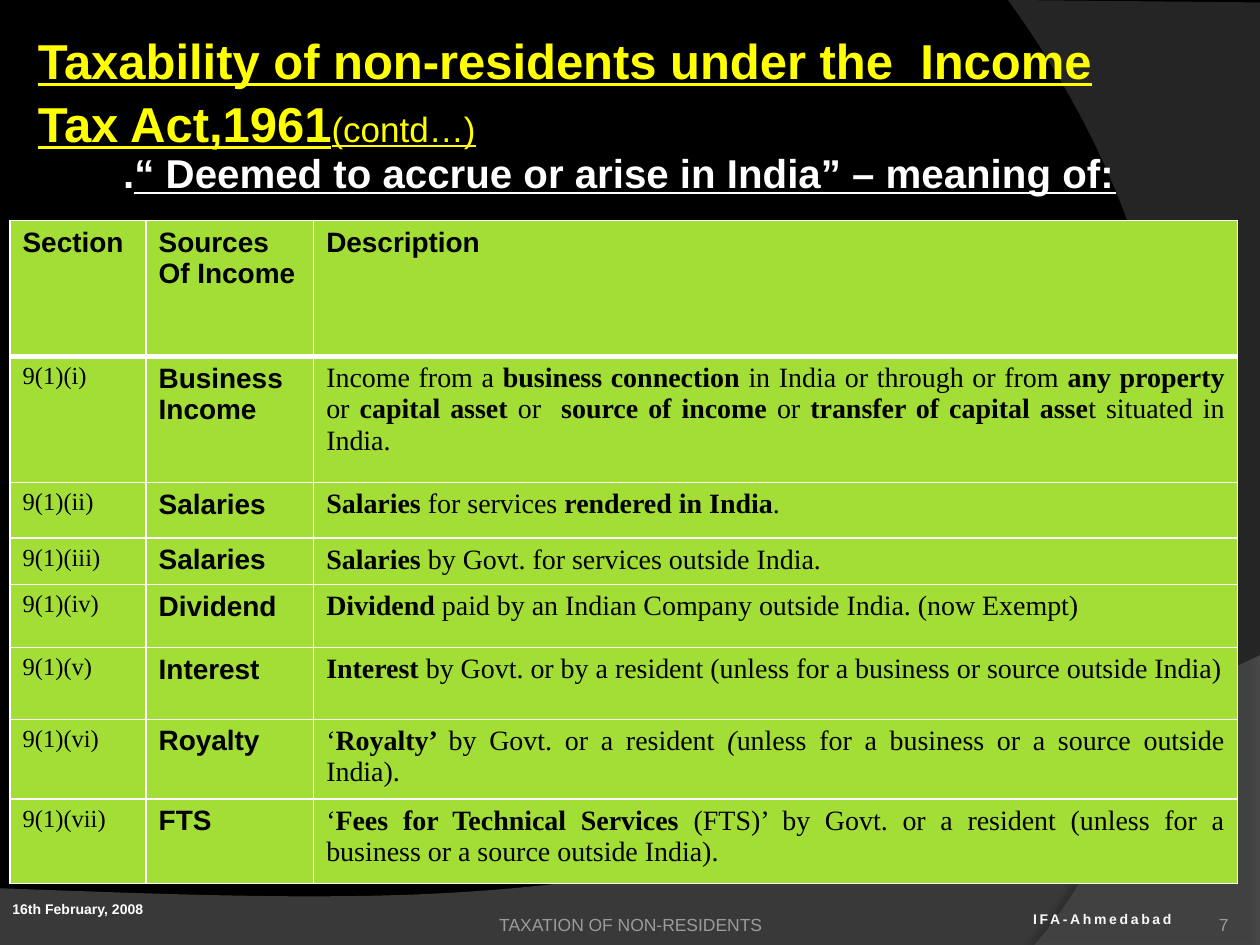
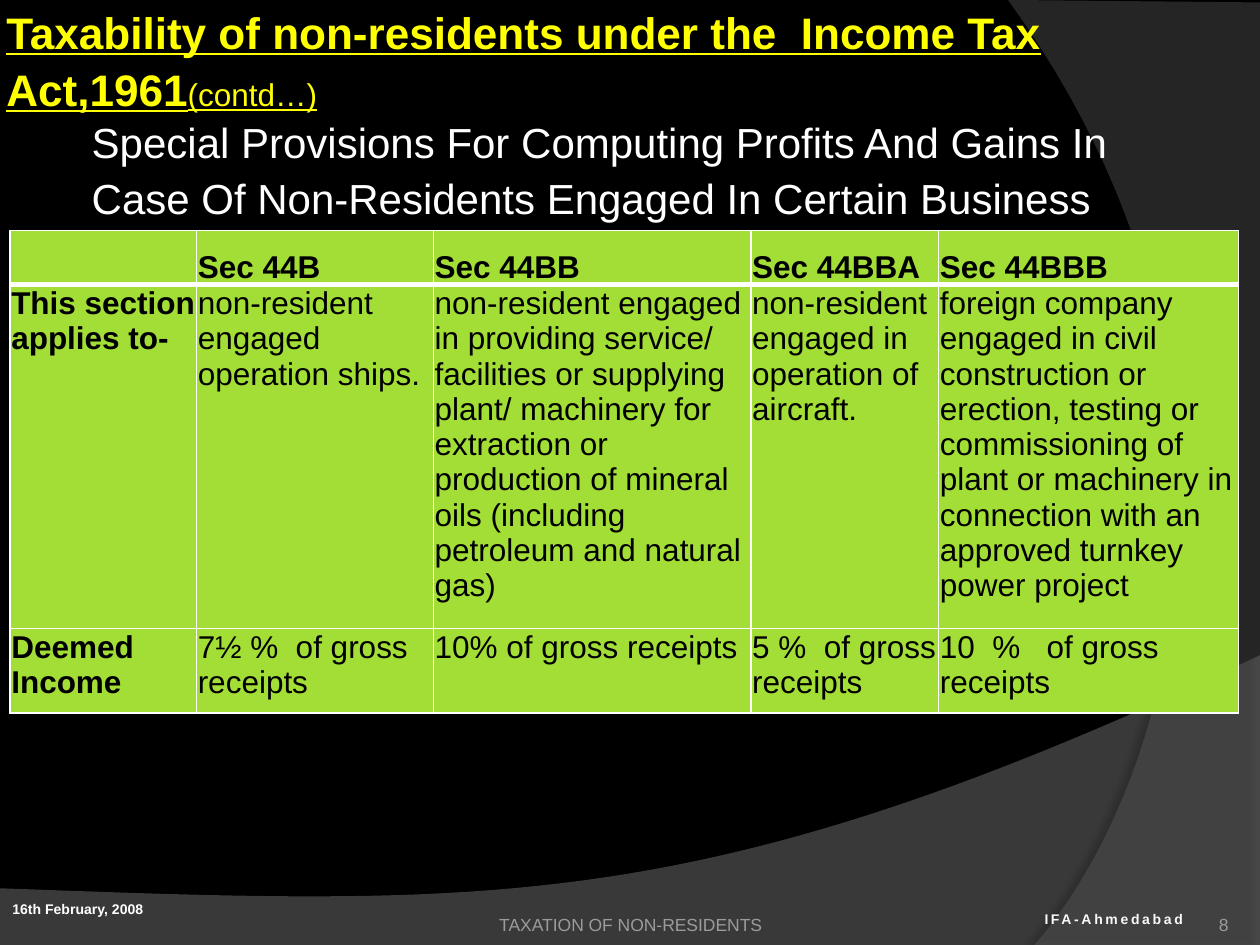
from lxml.etree import SubElement
from pptx import Presentation
from pptx.dml.color import RGBColor
from pptx.enum.text import MSO_ANCHOR as Anchor, PP_ALIGN as Align
from pptx.oxml.ns import qn
from pptx.util import Inches, Pt

COLORS = {
    "background": "000000",
    "swoosh": "7F7F7F",
    "arc": "5E5E5E",
    "title": "FFFF00",
    "white": "FFFFFF",
    "footer": "9D9B9A",
    "venue": "F8F8F8",
    "cell": "A2DE36",
    "ink": "000000",
}
SANS = "Arial"
SERIF = "Times New Roman"
DEFAULT_INSETS = (0.1, 0.05, 0.1, 0.05)
TIGHT_INSETS = (0.01, 0.01, 0.01, 0)
TEXT_SPACING = 1.08

INCOME_ROWS = [
    ("Section", "Sources Of Income", "Description"),
    ("9(1)(i)", "Business Income",
     "Income from a *business connection *in India or through or from *any property *or "
     "*capital asset* or  *source of income *or *transfer of capital asse*t situated in India."),
    ("9(1)(ii)", "Salaries", "*Salaries *for services *rendered in India*."),
    ("9(1)(iii)", "Salaries", "*Salaries* by Govt. for services outside India."),
    ("9(1)(iv)", "Dividend",
     "*Dividend* paid by an Indian Company outside India. (now Exempt)"),
    ("9(1)(v)", "Interest",
     "*Interest* by Govt. or by a resident (unless for a business or source outside India)"),
    ("9(1)(vi)", "Royalty",
     "‘*Royalty’ *by Govt. or a resident _(_unless for a business or a source outside India)."),
    ("9(1)(vii)", "FTS",
     "‘*Fees for Technical Services *(FTS)’ by Govt. or a resident "
     "(unless for a business or a source outside India)."),
]
PROVISION_ROWS = [
    ("", "Sec 44B", "Sec 44BB", "Sec 44BBA", "Sec 44BBB"),
    ("This section applies to-",
     "non-resident engaged operation ships.",
     "non-resident engaged\nin providing service/ facilities or supplying plant/ machinery for "
     "extraction or production of mineral oils (including petroleum and natural gas)",
     "non-resident engaged in operation of aircraft.",
     "foreign company engaged in civil construction or erection, testing or commissioning of "
     "plant or machinery in connection with an approved turnkey power project"),
    ("Deemed Income", "7½ %  of gross receipts", "10% of gross receipts",
     "5 %  of gross receipts", "10  %   of gross receipts"),
]


def rgb(name):
    return RGBColor.from_string(COLORS[name])


def style_run(run, size, color, bold=False, underline=False, font=SANS, italic=False):
    run.font.size = Pt(size)
    run.font.name = font
    run.font.bold = bold
    run.font.italic = italic
    run.font.underline = underline
    run.font.color.rgb = rgb(color)


def add_text(slide, box, runs, align=Align.LEFT, anchor=Anchor.TOP,
             insets=DEFAULT_INSETS, wrap=True):
    shape = slide.shapes.add_textbox(*map(Inches, box))
    frame = shape.text_frame
    frame.word_wrap = wrap
    frame.vertical_anchor = anchor
    (frame.margin_left, frame.margin_top,
     frame.margin_right, frame.margin_bottom) = map(Inches, insets)
    paragraph = frame.paragraphs[0]
    paragraph.alignment = align
    for text, style in runs:
        run = paragraph.add_run()
        run.text = text
        style_run(run, **style)
    return paragraph


def bezier(start, control_1, control_2, end, steps=48):
    points = []
    for step in range(1, steps + 1):
        t = step / steps
        weights = ((1 - t) ** 3, 3 * t * (1 - t) ** 2, 3 * t * t * (1 - t), t ** 3)
        corners = (start, control_1, control_2, end)
        points.append(tuple(sum(w * c[axis] for w, c in zip(weights, corners))
                            for axis in (0, 1)))
    return points


def add_band(slide, points, color, opacity, shadow_opacity, shadow_distance, direction):
    points = [(Inches(x), Inches(y)) for x, y in points]
    builder = slide.shapes.build_freeform(*points[0])
    builder.add_line_segments(points[1:], close=True)
    shape = builder.convert_to_shape()
    shape.fill.solid()
    shape.fill.fore_color.rgb = rgb(color)
    shape.line.fill.background()
    shape.shadow.inherit = False
    properties = shape._element.spPr
    fill_color = properties.find(qn("a:solidFill")).find(qn("a:srgbClr"))
    SubElement(fill_color, qn("a:alpha"), val=str(opacity * 1000))
    shadow = SubElement(properties.find(qn("a:effectLst")), qn("a:outerShdw"),
                        blurRad=str(Pt(4)), dist=str(Pt(shadow_distance)),
                        dir=str(direction * 60000), algn="ctr", rotWithShape="0")
    shadow_color = SubElement(shadow, qn("a:srgbClr"), val=COLORS["background"])
    SubElement(shadow_color, qn("a:alpha"), val=str(shadow_opacity * 1000))


def add_slide(presentation):
    slide = presentation.slides.add_slide(presentation.slide_layouts[6])
    slide.background.fill.solid()
    slide.background.fill.fore_color.rgb = rgb("background")
    swoosh = [(0, 7.05), (0, 7.51), (10, 7.51), (10, 5.2)]
    swoosh += bezier((10, 5.2), (5.59, 7.29), (3.91, 7.19), (0, 7.05))
    add_band(slide, swoosh, "swoosh", 45, 35, 3.5, 270)
    arc = [(10, 0.02), (10, 7.5), (8.21, 7.5)]
    arc += bezier((8.21, 7.5), (9.35, 6.19), (10.18, 3), (8, 0))
    add_band(slide, arc, "arc", 40, 45, 4, 180)
    return slide


def add_title(slide, box, size, suffix_size):
    style = dict(color="title", underline=True)
    paragraph = add_text(slide, box, [
        ("Taxability of non-residents under the  Income Tax Act,1961",
         dict(style, size=size, bold=True)),
        ("(contd…)", dict(style, size=suffix_size)),
    ], anchor=Anchor.MIDDLE, insets=(0.05,) * 4)
    paragraph.line_spacing = TEXT_SPACING


def add_subtitle(slide, box, runs):
    paragraph = add_text(slide, box, runs)
    paragraph.line_spacing = TEXT_SPACING
    properties = paragraph._p.get_or_add_pPr()
    properties.set("marL", str(Inches(0.46)))
    properties.set("indent", str(Inches(-0.42)))


def add_footers(slide, number, venue_left):
    grey = dict(size=10, color="footer")
    add_text(slide, (3.42, 7.02, 3.17, 0.4), [("TAXATION OF NON-RESIDENTS", grey)],
             Align.CENTER, Anchor.BOTTOM, (0, 0.05, 0, 0))
    add_text(slide, (8.92, 7.02, 0.83, 0.4), [(str(number), grey)],
             Align.RIGHT, Anchor.BOTTOM, (0,) * 4)
    add_text(slide, (0, 7.1, 3.33, 0.24),
             [("16th February, 2008", dict(size=8, color="white", bold=True))])
    venue = add_text(slide, (venue_left, 7.18, 1.34, 0.24),
                     [("IFA-Ahmedabad", dict(size=8, color="venue", bold=True))],
                     Align.CENTER, wrap=False)
    venue.runs[0].font._element.set("spc", "150")


def set_borders(cell, top, bottom):
    properties = cell._tc.get_or_add_tcPr()
    for side, width in (("L", 1), ("R", 1), ("T", top), ("B", bottom)):
        line = SubElement(properties, qn(f"a:ln{side}"), w=str(Pt(width)))
        fill = SubElement(line, qn("a:solidFill"))
        SubElement(fill, qn("a:srgbClr"), val=COLORS["white"])


def fill_cell(cell, markup, size, bold, font, align):
    frame = cell.text_frame
    for index, line in enumerate(markup.split("\n")):
        paragraph = frame.add_paragraph() if index else frame.paragraphs[0]
        paragraph.alignment = align
        for bold_index, part in enumerate(line.split("*")):
            for italic_index, text in enumerate(part.split("_")):
                if text:
                    run = paragraph.add_run()
                    run.text = text
                    style_run(run, size, "ink", bold or bold_index % 2 == 1,
                              font=font, italic=italic_index % 2 == 1)


def add_grid(slide, top, widths, heights, rows, cell_style,
             insets=DEFAULT_INSETS, header_anchor=Anchor.TOP):
    frame = slide.shapes.add_table(len(rows), len(widths), Inches(0.08), Inches(top),
                                   Inches(sum(widths)), Inches(sum(heights)))
    table = frame.table
    table.first_row = table.horz_banding = False
    for column, width in zip(table.columns, widths):
        column.width = Inches(width)
    for row_index, (row, height) in enumerate(zip(rows, heights)):
        table.rows[row_index].height = Inches(height)
        for column_index, markup in enumerate(row):
            cell = table.cell(row_index, column_index)
            set_borders(cell, 3 if row_index == 1 else 1, 3 if row_index == 0 else 1)
            cell.fill.solid()
            cell.fill.fore_color.rgb = rgb("cell")
            (cell.margin_left, cell.margin_top,
             cell.margin_right, cell.margin_bottom) = map(Inches, insets)
            cell.vertical_anchor = header_anchor if row_index == 0 else Anchor.TOP
            fill_cell(cell, markup, *cell_style(row_index, column_index))


def income_style(row, column):
    align = Align.JUSTIFY if column == 2 else Align.LEFT
    if row == 0 or column == 1:
        return 16, True, SANS, align
    return 14 if column == 0 else 16, False, SERIF, align


def provision_style(row, column):
    return 18, row == 0 or column == 0, SANS, Align.LEFT


def build_deemed_income(presentation):
    slide = add_slide(presentation)
    add_title(slide, (0.25, 0.08, 9, 1.25), 28, 20)
    style = dict(color="white", bold=True)
    add_subtitle(slide, (0.42, 1.08, 9, 0.6), [
        ("\t", dict(style, size=24)),
        (".", dict(style, size=23)),
        ("“ Deemed to accrue or arise in India” – meaning of:",
         dict(style, size=23, underline=True)),
    ])
    add_grid(slide, 1.75, [1.08, 1.33, 7.33],
             [1.08, 1, 0.44, 0.37, 0.5, 0.57, 0.5, 0.67], INCOME_ROWS, income_style)
    add_footers(slide, 7, 8.08)


def build_special_provisions(presentation):
    slide = add_slide(presentation)
    add_title(slide, (0, 0, 9, 0.92), 25.2, 18)
    add_subtitle(slide, (0.17, 0.75, 9.33, 1), [
        ("\t", dict(size=30, color="white")),
        ("Special Provisions For Computing Profits And Gains In Case Of Non-Residents "
         "Engaged In Certain Business", dict(size=24, color="white")),
    ])
    add_grid(slide, 1.83, [1.48, 1.88, 2.52, 1.49, 2.38], [0.43, 2.73, 0.67],
             PROVISION_ROWS, provision_style, TIGHT_INSETS, Anchor.BOTTOM)
    add_footers(slide, 8, 8.17)


def main():
    presentation = Presentation()
    presentation.slide_width = Inches(10)
    presentation.slide_height = Inches(7.5)
    build_deemed_income(presentation)
    build_special_provisions(presentation)
    presentation.save("out.pptx")


if __name__ == "__main__":
    main()
